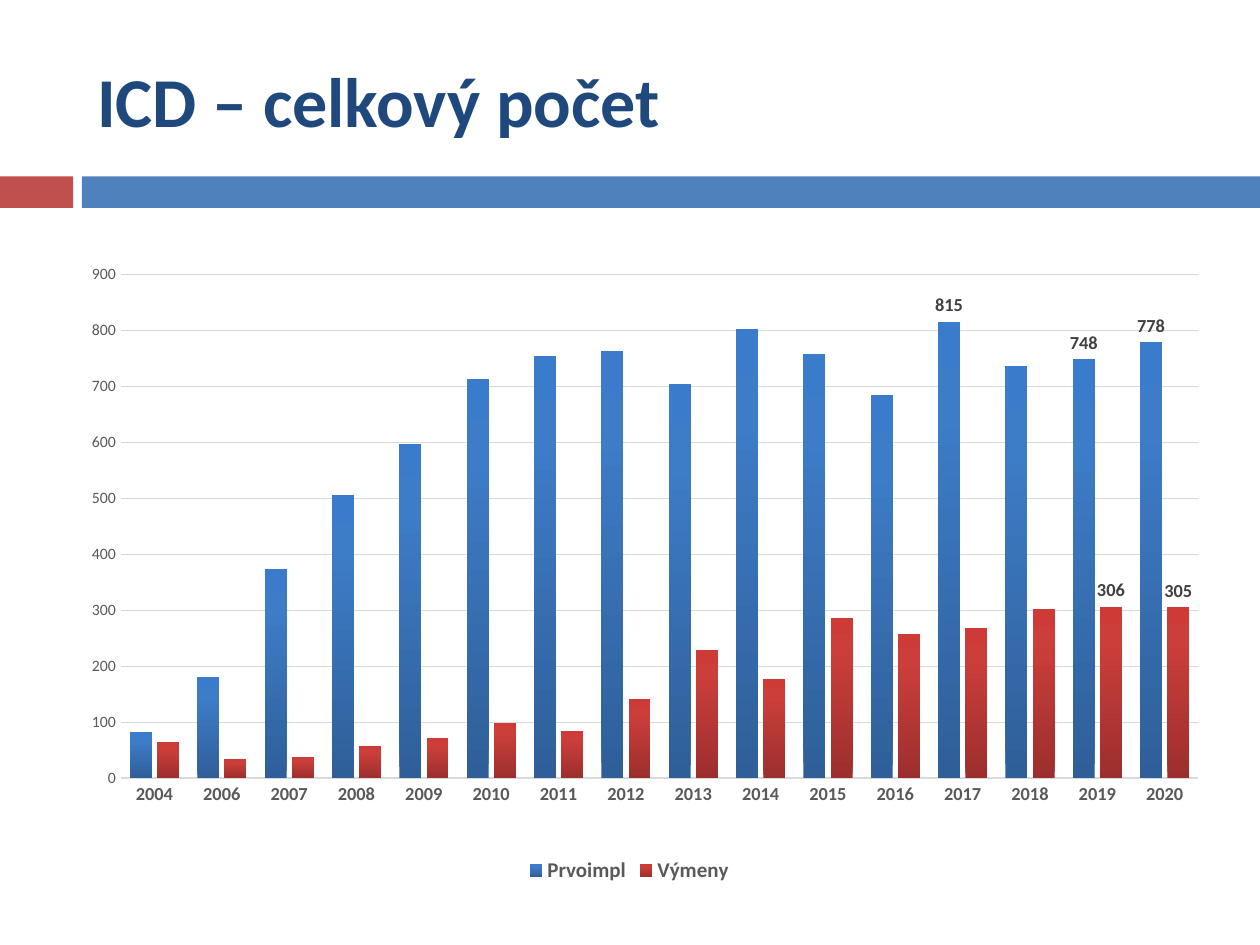
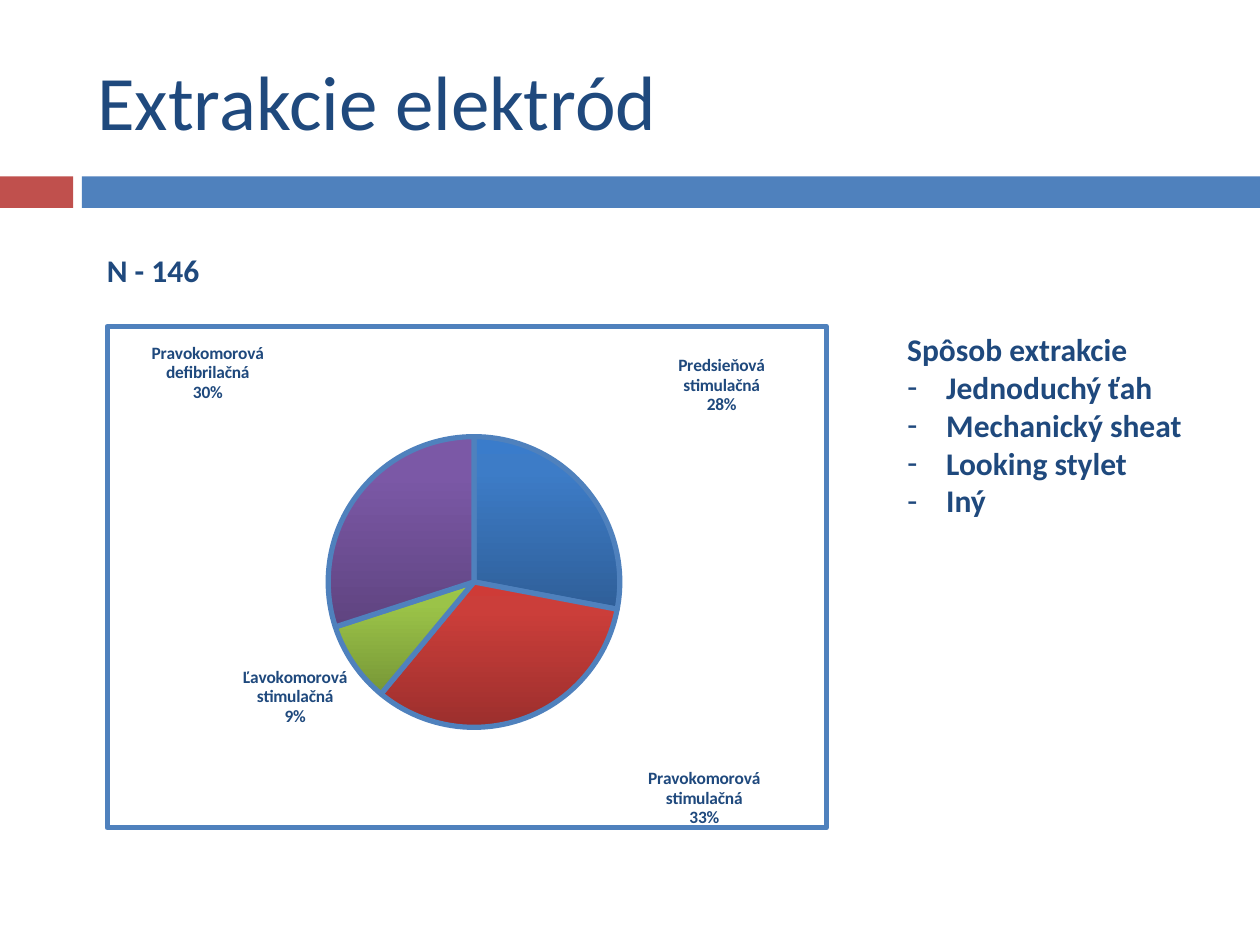
import copy
import pptx
import pptx.chart.data
import pptx.dml.color
import pptx.enum.chart
import pptx.enum.shapes
import pptx.enum.text
import pptx.oxml
import pptx.oxml.ns
import pptx.util
from lxml import etree

Inches = pptx.util.Inches
Pt = pptx.util.Pt
qn = pptx.oxml.ns.qn
Kind = pptx.enum.chart.XL_CHART_TYPE
Spot = pptx.enum.chart.XL_LABEL_POSITION

NAVY, BLUE, RED, GREY, PALE = "1F497D", "4F81BD", "C0504D", "595959", "D9D9D9"
SHADES = [
    ("2F5F99", "3D7CC7", "3A7CCB"),
    ("9C2F2D", "CB3E3A", "CE3B37"),
    ("779737", "9BC348", "9DC746"),
    ("5F4480", "7B58A6", "7C57A8"),
]
YEARS = ["2004"] + [str(year) for year in range(2006, 2021)]
COUNTS = {
    "Prvoimpl": [82, 180, 373, 506, 597, 713, 753, 762,
                 704, 802, 758, 684, 815, 736, 748, 778],
    "Výmeny": [65, 34, 38, 58, 71, 99, 85, 142,
               229, 178, 286, 257, 269, 302, 306, 305],
}
MARKED = {"Prvoimpl": ["2017", "2019", "2020"], "Výmeny": ["2019", "2020"]}
LEADS = {
    "Predsieňová stimulačná": 28,
    "Pravokomorová stimulačná": 33,
    "Ľavokomorová stimulačná": 9,
    "Pravokomorová defibrilačná": 30,
}
SHIFTS = {0: (0.12, -0.14), 1: (0.17, 0.18), 3: (-0.12, -0.18)}
WAYS = ["Jednoduchý ťah", "Mechanický sheat", "Looking stylet", "Iný"]


def hue(code):
    return pptx.dml.color.RGBColor.from_string(code)


def style(font, size, color=NAVY, bold=True):
    font.name, font.size, font.bold = "Calibri", Pt(size), bold
    font.color.rgb = hue(color)


def place(shape, box):
    shape.left, shape.top, shape.width, shape.height = map(Inches, box)


def stroke(line, color, width):
    line.color.rgb = hue(color)
    line.width = Pt(width)


def shade(fill, colors):
    fill.gradient()
    fill.gradient_angle = 90
    last = fill.gradient_stops[1].element
    last.addnext(copy.deepcopy(last))
    for stop, color, spot in zip(fill.gradient_stops, colors, (0, 0.8, 1)):
        stop.color.rgb = hue(color)
        stop.position = spot


def add_bands(slide, master):
    tree = master.element.cSld.spTree
    for mark, left, width, color in [(21, 0, 0.58, RED), (22, 0.65, 9.35, BLUE)]:
        band = slide.shapes.add_shape(
            pptx.enum.shapes.MSO_SHAPE.RECTANGLE,
            *map(Inches, (left, 1.4, width, 0.25)))
        band.shadow.inherit = False
        band.fill.solid()
        band.fill.fore_color.rgb = hue(color)
        band.line.fill.background()
        next(band.element.iter(qn("p:cNvPr"))).set("id", str(mark))
        tree.append(band.element)


def add_title(slide, text, size, bold):
    title = slide.shapes.title
    place(title, (0.67, 0.25, 8.92, 1.08))
    frame = title.text_frame
    frame.text = text
    frame.vertical_anchor = pptx.enum.text.MSO_ANCHOR.MIDDLE
    para = frame.paragraphs[0]
    para.alignment = pptx.enum.text.PP_ALIGN.LEFT
    style(para.font, size, NAVY, bold)


def make_layout(parts):
    layout = etree.Element(qn("c:layout"))
    manual = etree.SubElement(layout, qn("c:manualLayout"))
    for tag, value in parts.items():
        etree.SubElement(manual, qn("c:" + tag), val=str(value))
    return layout


def add_chart(slide, kind, box, names, rows, plot):
    data = pptx.chart.data.CategoryChartData()
    data.categories = names
    for name, values in rows.items():
        data.add_series(name, values)
    chart = slide.shapes.add_chart(kind, *map(Inches, box), data).chart
    chart.has_title = False
    chart.has_legend = False
    style(chart.font, 10, "000000", False)
    area = next(chart.element.iter(qn("c:plotArea")))
    for old in area.findall(qn("c:layout")):
        area.remove(old)
    area.insert(0, make_layout({
        "layoutTarget": "inner", "xMode": "edge", "yMode": "edge",
        **dict(zip("xywh", plot))}))
    return chart


def add_bars(slide, box):
    chart = add_chart(slide, Kind.COLUMN_CLUSTERED, box, YEARS, COUNTS,
                      (0.08, 0.05, 0.89, 0.78))
    plot = chart.plots[0]
    plot.gap_width, plot.overlap, plot.vary_by_categories = 83, -24, False
    for row, colors in zip(plot.series, SHADES):
        shade(row.format.fill, colors)
        row.invert_if_negative = False
        row.data_labels.show_value = False
        for year in MARKED[row.name]:
            label = row.points[YEARS.index(year)].data_label
            style(label.font, 10.5, "404040")
            label.position = Spot.OUTSIDE_END
    none = pptx.enum.chart.XL_TICK_MARK.NONE
    for axis in (chart.category_axis, chart.value_axis):
        axis.major_tick_mark = axis.minor_tick_mark = none
    base, scale = chart.category_axis, chart.value_axis
    style(base.tick_labels.font, 10.5, GREY)
    stroke(base.format.line, PALE, 1)
    style(scale.tick_labels.font, 9, GREY, False)
    scale.minimum_scale, scale.maximum_scale, scale.major_unit = 0, 900, 100
    scale.format.line.fill.background()
    stroke(scale.major_gridlines.format.line, PALE, 0.75)
    chart.has_legend = True
    chart.legend.position = pptx.enum.chart.XL_LEGEND_POSITION.BOTTOM
    chart.legend.include_in_layout = False
    style(chart.legend.font, 12, GREY)


def frame_chart(chart, color, width):
    props = etree.Element(qn("c:spPr"))
    etree.SubElement(props, qn("a:noFill"))
    line = etree.SubElement(props, qn("a:ln"), w=str(Pt(width)))
    fill = etree.SubElement(line, qn("a:solidFill"))
    etree.SubElement(fill, qn("a:srgbClr"), val=color)
    chart.element.find(qn("c:chart")).addnext(props)


def label_pie(chart, row):
    labels = row.data_labels
    style(labels.font, 10)
    labels.position = Spot.BEST_FIT
    for spot in SHIFTS:
        label = row.points[spot].data_label
        style(label.font, 10)
        label.position = Spot.BEST_FIT
    for item, (x, y) in zip(chart.element.iter(qn("c:dLbl")), SHIFTS.values()):
        item.find(qn("c:idx")).addnext(make_layout({"x": x, "y": y}))
    flags = {"showVal": 0, "showCatName": 1, "showPercent": 1,
             "showLeaderLines": 0}
    for tag, value in flags.items():
        for flag in chart.element.iter(qn("c:" + tag)):
            flag.set("val", str(value))
    for flag in chart.element.iter(qn("c:showBubbleSize")):
        mark = etree.Element(qn("c:separator"))
        mark.text = "\n"
        flag.addnext(mark)


def add_pie(slide, box):
    chart = add_chart(slide, Kind.PIE, box, list(LEADS),
                      {"": list(LEADS.values())},
                      (0.15, 0.22, 0.72, 0.58))
    frame_chart(chart, BLUE, 3)
    row = chart.plots[0].series[0]
    for spot, colors in enumerate(SHADES):
        look = row.points[spot].format
        shade(look.fill, colors)
        stroke(look.line, BLUE, 3)
    label_pie(chart, row)


def add_note(slide, box, text):
    note = slide.shapes.add_textbox(*map(Inches, box)).text_frame
    note.word_wrap = False
    note.text = text
    style(note.paragraphs[0].font, 18)


def add_list(slide, box, head, items):
    body = slide.placeholders[1]
    place(body, box)
    frame = body.text_frame
    frame.text = "\n".join([head, *items])
    frame.word_wrap = False
    frame.auto_size = pptx.enum.text.MSO_AUTO_SIZE.NONE
    for spot, para in enumerate(frame.paragraphs):
        style(para.font, 18)
        para.space_before = Pt(0)
        props = para.font._element.getparent()
        inset = Inches(0.31) if spot else 0
        props.set("marL", str(inset))
        props.set("indent", str(-inset))
        bullet = etree.Element(qn("a:buChar" if spot else "a:buNone"))
        if spot:
            bullet.set("char", "-")
        props.find(qn("a:defRPr")).addprevious(bullet)


def main():
    deck = pptx.Presentation()
    deck.slide_width, deck.slide_height = Inches(10), Inches(7.5)
    count = deck.slides.add_slide(deck.slide_layouts[5])
    add_bands(count, deck.slide_master)
    add_title(count, "ICD – celkový počet", 40, True)
    add_bars(count, (0.19, 1.92, 9.61, 5.13))

    leads = deck.slides.add_slide(deck.slide_layouts[1])
    add_title(leads, "Extrakcie elektród", 44, False)
    add_pie(leads, (0.83, 2.57, 5.75, 4.02))
    add_note(leads, (0.75, 1.94, 0.94, 0.4), "N - 146")
    add_list(leads, (7.1, 2.57, 2.46, 1.92), "Spôsob extrakcie", WAYS)
    deck.save("out.pptx")


if __name__ == "__main__":
    main()
